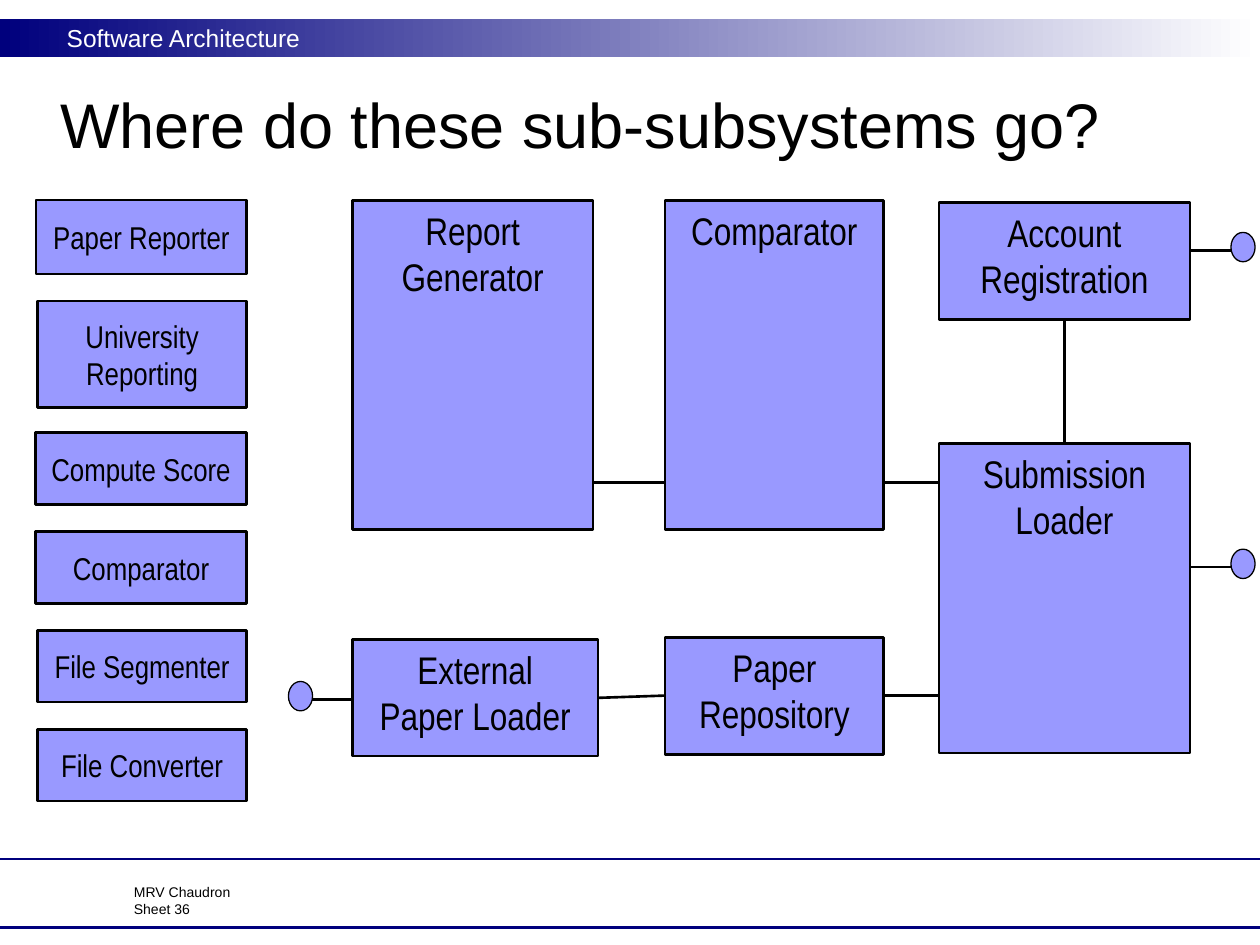
from lxml import etree
from pptx import Presentation
from pptx.dml.color import RGBColor
from pptx.enum.dml import MSO_LINE
from pptx.enum.shapes import MSO_CONNECTOR, MSO_SHAPE
from pptx.enum.text import MSO_ANCHOR, MSO_AUTO_SIZE, PP_ALIGN
from pptx.oxml.ns import qn
from pptx.util import Pt

COLORS = {"navy": "00007D", "white": "FFFFFF", "black": "000000", "box": "9999FF"}
RGB = {name: RGBColor.from_string(value) for name, value in COLORS.items()}


def write(shape, text, size, font="Arial", color="black",
          align=PP_ALIGN.LEFT, anchor=MSO_ANCHOR.TOP):
    frame = shape.text_frame
    frame.auto_size = MSO_AUTO_SIZE.NONE
    frame.word_wrap = True
    frame.vertical_anchor = anchor
    frame.text = text
    for paragraph in frame.paragraphs:
        paragraph.alignment = align
        for run in paragraph.runs:
            run.font.size = Pt(size)
            run.font.name = font
            run.font.color.rgb = RGB[color]


def connect(x1, y1, x2, y2, color="black", width=1.5):
    line = slide.shapes.add_connector(
        MSO_CONNECTOR.STRAIGHT, Pt(x1), Pt(y1), Pt(x2), Pt(y2))
    line.line.color.rgb = RGB[color]
    line.line.width = Pt(width)
    etree.SubElement(line._element.spPr, qn("a:effectLst"))


presentation = Presentation()
presentation.slide_width, presentation.slide_height = Pt(720), Pt(540)
slide = presentation.slides.add_slide(presentation.slide_layouts[5])

# Header band
band = slide.shapes.add_shape(MSO_SHAPE.RECTANGLE, 0, Pt(10.8), Pt(720), Pt(21.6))
band.shadow.inherit = False
band.line.fill.background()
band.fill.gradient()
band.fill.gradient_angle = 0
for stop, color, position in zip(band.fill.gradient_stops, ("navy", "white"), (0, 1)):
    stop.color.rgb = RGB[color]
    stop.position = position
course = slide.shapes.add_textbox(Pt(31), Pt(9.4), Pt(658), Pt(24))
write(course, "Software Architecture", 14, color="white")

# Title
title = slide.shapes.title
title.left, title.top, title.width, title.height = Pt(27.2), Pt(41), Pt(673), Pt(59)
write(title, "Where do these sub-subsystems go?", 36, anchor=MSO_ANCHOR.MIDDLE)

# Footer
for rule_y in (491, 530):
    connect(0, rule_y, 720, rule_y, color="navy", width=1.25)
footer = slide.shapes.add_textbox(Pt(69.4), Pt(492.5), Pt(567), Pt(35.3))
write(footer, "MRV Chaudron\nSheet 36", 8, anchor=MSO_ANCHOR.BOTTOM)

# Sub-subsystems to place, then the subsystems: text, left, top, width, height
candidates = [
    ("Paper Reporter", 20.6, 114.3, 120.4, 42.2),
    ("University Reporting", 21.4, 172, 119.6, 61),
    ("Compute Score", 20.2, 247.3, 120.8, 41),
    ("Comparator", 20.2, 303.8, 120.8, 41),
    ("File Segmenter", 21.4, 360.3, 119.6, 41),
    ("File Converter", 21.4, 416.8, 119.6, 41),
]
subsystems = [
    ("Report Generator", 201.3, 114.5, 137.5, 188),
    ("Comparator", 380, 114.5, 125, 188),
    ("Account\vRegistration", 536.5, 115.8, 143.5, 66.8),
    ("Submission Loader", 536.5, 253.4, 143.5, 177),
    ("External\vPaper Loader", 201.3, 365.5, 140.4, 66.5),
    ("Paper\vRepository", 380, 364.3, 125, 66.8),
]
for boxes, size, anchor in ((candidates, 18, MSO_ANCHOR.MIDDLE),
                            (subsystems, 22, MSO_ANCHOR.TOP)):
    for text, left, top, width, height in boxes:
        box = slide.shapes.add_shape(
            MSO_SHAPE.RECTANGLE, Pt(left), Pt(top), Pt(width), Pt(height))
        box.shadow.inherit = False
        box.fill.solid()
        box.fill.fore_color.rgb = RGB["box"]
        box.line.color.rgb = RGB["black"]
        box.line.width = Pt(1.5)
        write(box, text, size, font="Arial Narrow", align=PP_ALIGN.CENTER, anchor=anchor)

# Links between subsystems
for link in ((338.8, 275.6, 380, 275.6), (505, 275.6, 536.5, 275.6),
             (341.7, 398.8, 380, 397.5), (505, 397.5, 536.5, 397.5),
             (608.3, 182.6, 608.3, 253.4)):
    connect(*link)

# External interfaces: stem start, stem end, stem height, circle left
for start, end, stem_y, circle_left in ((680, 707, 143, 703.4), (680, 707, 324, 703.4),
                                        (201.3, 175.5, 399.6, 164.8)):
    connect(start, stem_y, end, stem_y)
    circle = slide.shapes.add_shape(
        MSO_SHAPE.OVAL, Pt(circle_left), Pt(stem_y - 10.2), Pt(13.8), Pt(16.8))
    circle.shadow.inherit = False
    circle.fill.solid()
    circle.fill.fore_color.rgb = RGB["box"]
    circle.line.color.rgb = RGB["black"]
    circle.line.width = Pt(0.75)

presentation.save("out.pptx")
